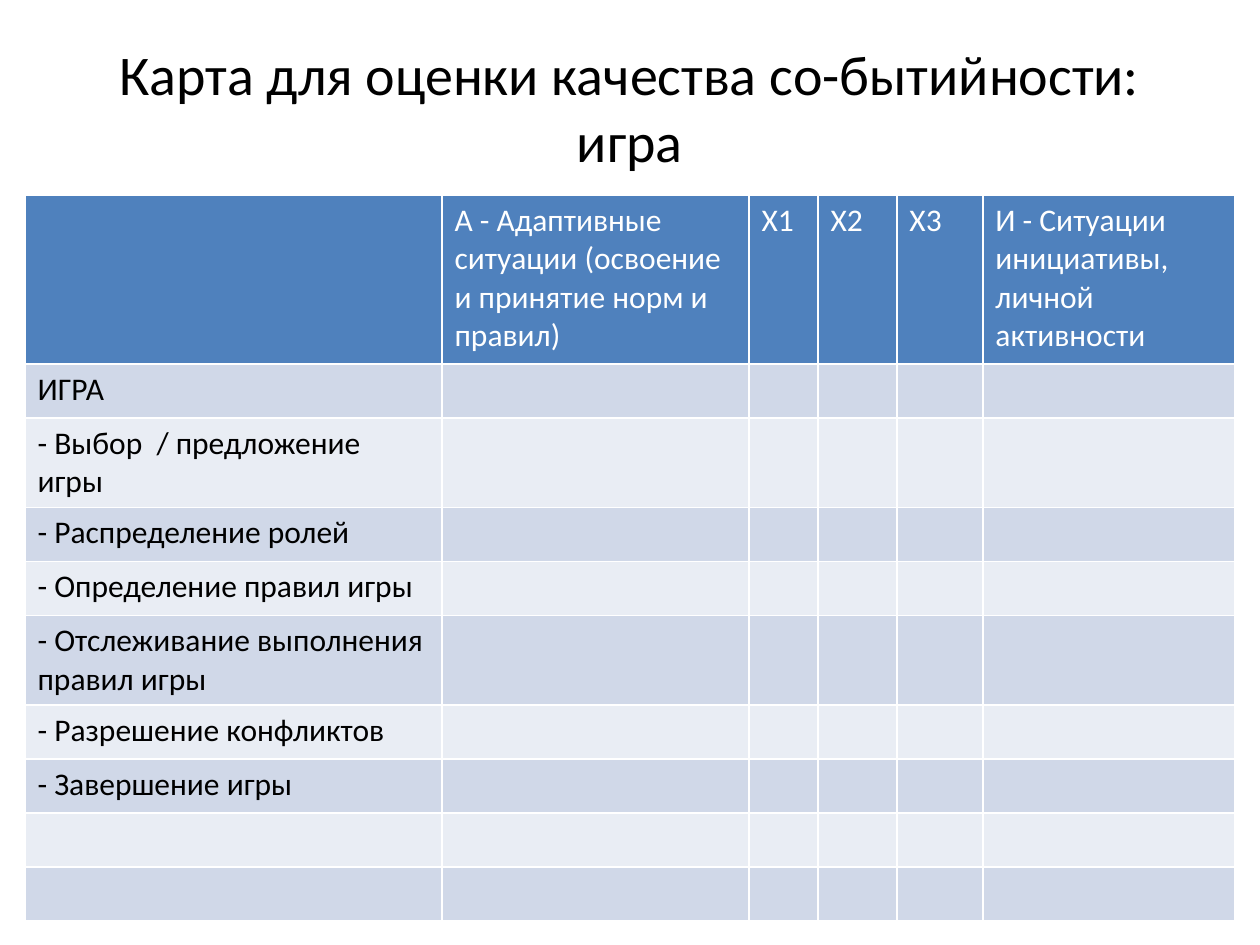
from pptx import Presentation
from pptx import util as u
from pptx.dml.color import RGBColor
from pptx.enum import text

PX = 914400 / 126
FONT = "Calibri"
BLACK = RGBColor(0x00, 0x00, 0x00)
WHITE = RGBColor(0xFF, 0xFF, 0xFF)
HEADER = RGBColor(0x4F, 0x81, 0xBD)
BANDS = (RGBColor(0xE9, 0xED, 0xF4), RGBColor(0xD0, 0xD8, 0xE8))

TITLE = "Карта для оценки качества со-бытийности: игра"
HEADINGS = [
    "",
    "А - Адаптивные ситуации (освоение и принятие норм и правил)",
    "Х1",
    "Х2",
    "Х3",
    "И - Ситуации инициативы, личной активности",
]
STAGES = [
    "ИГРА",
    "- Выбор  / предложение игры",
    "- Распределение ролей",
    "- Определение правил игры",
    "- Отслеживание выполнения правил игры",
    "- Разрешение конфликтов",
    "- Завершение игры",
    "",
    "",
]
COLUMN_WIDTHS = [417, 307, 69, 79, 86, 252]
HEADER_HEIGHT, ROW_HEIGHT = 169, 54


def px(length):
    """Turn a length in px into EMU."""
    return u.Emu(round(length * PX))


def style_text(para, size, color):
    """Set the font of a paragraph."""
    para.font.name = FONT
    para.font.size = u.Pt(size)
    para.font.bold = False
    para.font.color.rgb = color


def place_title(page, left, top, width, height):
    """Move and format the title placeholder."""
    box = page.shapes.title
    box.left, box.top, box.width, box.height = map(px, (left, top, width, height))
    frame = box.text_frame
    frame.text = TITLE
    frame.word_wrap = True
    frame.auto_size = text.MSO_AUTO_SIZE.NONE
    frame.vertical_anchor = text.MSO_ANCHOR.MIDDLE
    para = frame.paragraphs[0]
    para.alignment = text.PP_ALIGN.CENTER
    style_text(para, 32, BLACK)


def fill_cell(cell, wording, fill, color):
    """Write one table cell and colour it."""
    cell.fill.solid()
    cell.fill.fore_color.rgb = fill
    cell.text = wording
    style_text(cell.text_frame.paragraphs[0], 18, color)


def place_card(page, left, top):
    """Add the assessment table with its header and banded rows."""
    rows = [HEADINGS] + [[stage] + [""] * (len(HEADINGS) - 1) for stage in STAGES]
    height = HEADER_HEIGHT + ROW_HEIGHT * len(STAGES)
    card = page.shapes.add_table(
        len(rows), len(HEADINGS),
        px(left), px(top), px(sum(COLUMN_WIDTHS)), px(height),
    ).table
    for column, width in zip(card.columns, COLUMN_WIDTHS):
        column.width = px(width)
    for index, wordings in enumerate(rows):
        is_header = index == 0
        card.rows[index].height = px(HEADER_HEIGHT if is_header else ROW_HEIGHT)
        fill = HEADER if is_header else BANDS[index % 2]
        color = WHITE if is_header else BLACK
        for cell, wording in zip(card.rows[index].cells, wordings):
            fill_cell(cell, wording, fill, color)


def main():
    """Build the slide and save the deck."""
    deck = Presentation()
    deck.slide_width, deck.slide_height = px(1260), px(945)
    page = deck.slides.add_slide(deck.slide_layouts[5])
    place_title(page, 63, 38, 1134, 137)
    place_card(page, 25, 195)
    deck.save("out.pptx")


if __name__ == "__main__":
    main()
